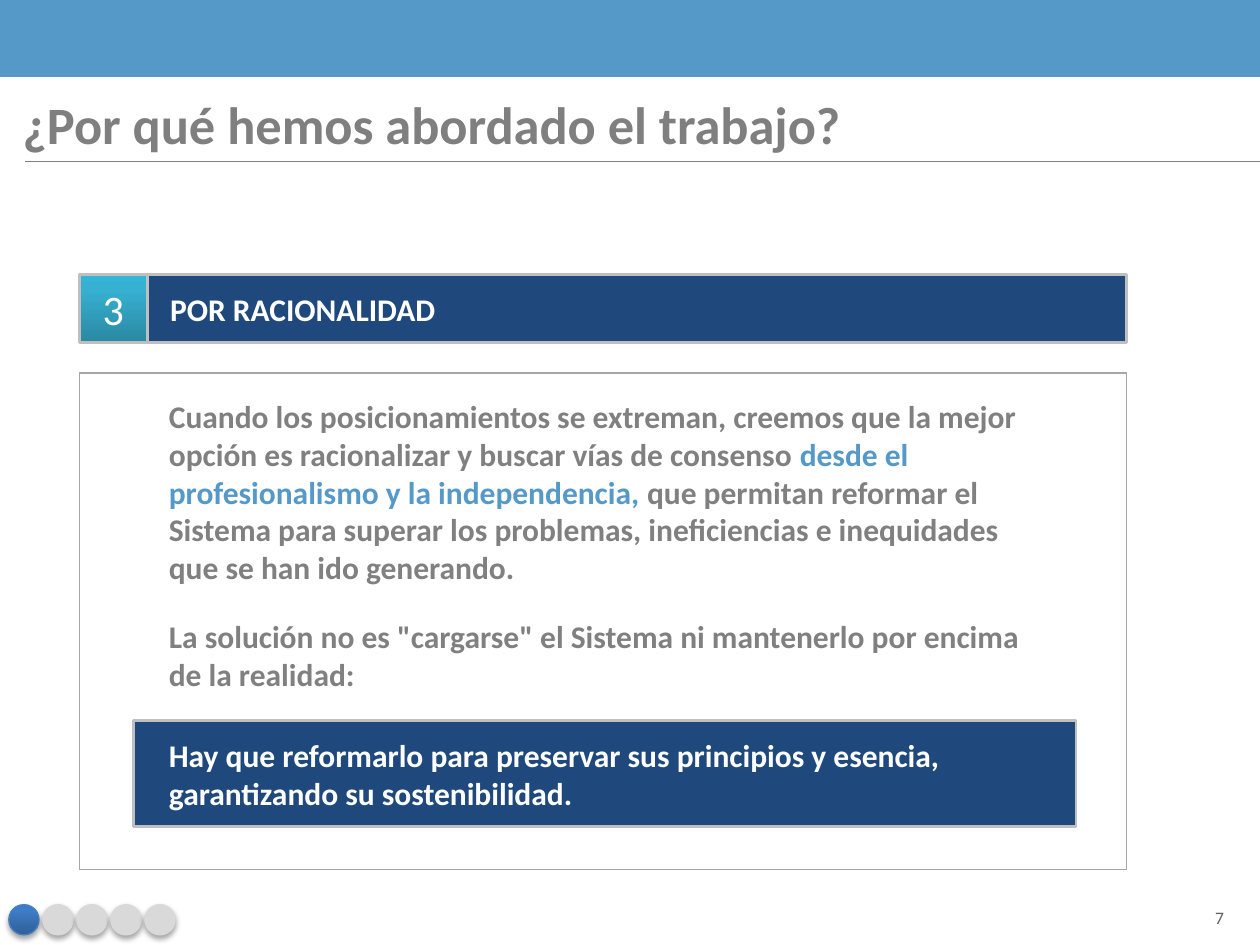
from copy import deepcopy
from dataclasses import dataclass

from lxml import etree
from pptx import Presentation
from pptx import util as u
from pptx.dml.color import RGBColor
from pptx.enum import shapes, text
from pptx.oxml.ns import qn


@dataclass(frozen=True)
class Theme:
    font: str = "Calibri"
    sky: str = "5599C9"
    navy: str = "1F497D"
    gray: str = "808080"
    title: str = "7F7F7F"
    number: str = "5F5F5F"
    edge: str = "BFBFBF"
    frame: str = "A6A6A6"
    dot: str = "D9D9D9"
    dot_edge: str = "4B7EBC"
    white: str = "FFFFFF"
    teal_fade: tuple = ("2A88A2", "37B1D2", "34B4D6")
    blue_fade: tuple = ("2F5F99", "3D7CC7", "3A7CCB")
    title_size: int = 30
    badge_size: int = 24
    body_size: int = 18
    page_size: int = 10


T = Theme()
W, H = 10, 7.5

# Each paragraph is a list of (text, colour) runs.
TITLE = [[("¿Por qué hemos abordado el trabajo?", T.title)]]
HEADING = [[("POR RACIONALIDAD", T.white)]]
BADGE = [[("3", T.white)]]
PAGE = [[("7", T.number)]]
REASONS = [
    [("Cuando los posicionamientos se extreman, creemos que la mejor opción es "
      "racionalizar y buscar vías de consenso ", T.gray),
     ("desde el profesionalismo y la independencia, ", T.sky),
     ("que permitan reformar el Sistema para superar los problemas, "
      "ineficiencias e inequidades que se han ido generando.", T.gray)],
    [('La solución no es "cargarse" el Sistema ni mantenerlo por encima '
      "de la realidad:", T.gray)],
]
CONCLUSION = [[("Hay que reformarlo para preservar sus principios y esencia, "
                "garantizando su sostenibilidad.", T.white)]]
DOTS, ACTIVE_DOT = 5, 0

# Layout, in inches
LEFT, RIGHT = 0.63, 8.94
BAND_H = 0.61
RULE_Y = 1.28
PAD = 0.12
BAR_X, BAR_Y, BAR_H = 1.06, 2.18, 0.54
TEXT_X, TEXT_W = 1.22, 7.09
FRAME_Y, FRAME_H = 2.96, 3.94
END_Y, END_W, END_H = 5.72, 7.48, 0.84
DOT_X, DOT_Y, DOT_D, DOT_STEP = 0.07, 7.18, 0.24, 0.27


def inches(*lengths):
    return [u.Inches(v) for v in lengths]


def rgb(code):
    return RGBColor.from_string(code)


def fade(fill, colors):
    """Vertical gradient, listed from bottom to top."""
    fill.gradient()
    fill.gradient_angle = 90
    stops = fill.gradient_stops
    first = stops[0]._gs
    first.addnext(deepcopy(first))
    for stop, place, color in zip(fill.gradient_stops, (0, 0.8, 1), colors):
        stop.position = place
        stop.color.rgb = rgb(color)


def add_box(parent, box, fill=None, line=None, width=0.75,
            kind=shapes.MSO_SHAPE.RECTANGLE):
    s = parent.add_shape(kind, *inches(*box))
    s.shadow.inherit = False
    if fill is None:
        s.fill.background()
    elif isinstance(fill, tuple):
        fade(s.fill, fill)
    else:
        s.fill.solid()
        s.fill.fore_color.rgb = rgb(fill)
    if line:
        s.line.color.rgb = rgb(line)
        s.line.width = u.Pt(width)
    else:
        s.line.fill.background()
    return s


def write(s, paragraphs, size=T.body_size, bold=True, inset=PAD,
          anchor=text.MSO_ANCHOR.TOP, align=text.PP_ALIGN.LEFT):
    tf = s.text_frame
    frame = dict(word_wrap=True, auto_size=text.MSO_AUTO_SIZE.NONE,
                 vertical_anchor=anchor, margin_left=u.Inches(inset),
                 margin_right=u.Inches(PAD), margin_top=u.Inches(PAD),
                 margin_bottom=u.Inches(PAD))
    for name, value in frame.items():
        setattr(tf, name, value)
    for i, runs in enumerate(paragraphs):
        p = tf.add_paragraph() if i else tf.paragraphs[0]
        p.alignment = align
        p.space_before = u.Pt(12 if i else 0)
        p.space_after = u.Pt(6 if len(paragraphs) > 1 else 0)
        for words, color in runs:
            r = p.add_run()
            r.text = words
            for name, value in dict(name=T.font, size=u.Pt(size), bold=bold).items():
                setattr(r.font, name, value)
            r.font.color.rgb = rgb(color)


def add_text(slide, box, paragraphs, **style):
    write(slide.shapes.add_textbox(*inches(*box)), paragraphs, **style)


def add_soft_shadow(s):
    effects = s._element.spPr.find(qn("a:effectLst"))
    shadow = etree.SubElement(effects, qn("a:outerShdw"), dir="5400000",
                              blurRad=str(u.Pt(3.1)), dist=str(u.Pt(1.8)),
                              rotWithShape="0")
    color = etree.SubElement(shadow, qn("a:srgbClr"), val="000000")
    etree.SubElement(color, qn("a:alpha"), val="35000")


def add_progress(slide):
    group = slide.shapes.add_group_shape().shapes
    for i in range(DOTS):
        active = i == ACTIVE_DOT
        dot = add_box(group, (DOT_X + i * DOT_STEP, DOT_Y, DOT_D, DOT_D),
                      T.blue_fade if active else T.dot,
                      T.dot_edge if active else T.dot,
                      kind=shapes.MSO_SHAPE.OVAL)
        add_soft_shadow(dot)


def add_rule(slide):
    rule = slide.shapes.add_connector(shapes.MSO_CONNECTOR.STRAIGHT,
                                      *inches(0.2, RULE_Y, W, RULE_Y))
    rule.line.color.rgb = rgb(T.title)
    rule.line.width = u.Pt(0.75)
    etree.SubElement(rule._element.spPr, qn("a:effectLst"))


def main():
    prs = Presentation()
    prs.slide_width, prs.slide_height = inches(W, H)
    slide = prs.slides.add_slide(prs.slide_layouts[5])
    sp = slide.shapes
    centred = dict(bold=False, anchor=text.MSO_ANCHOR.MIDDLE,
                   align=text.PP_ALIGN.CENTER)

    title = sp.title
    title.left, title.top, title.width, title.height = inches(0.06, BAND_H, 9.88, 0.74)
    write(title, TITLE, size=T.title_size)
    add_box(sp, (0, 0, W, BAND_H), T.sky)
    add_rule(slide)
    add_text(slide, (9.43, 7.12, 0.5, 0.33), PAGE, size=T.page_size, **centred)
    add_progress(slide)

    bar = add_box(sp, (BAR_X, BAR_Y, RIGHT - BAR_X, BAR_H), T.navy, T.edge, 1.5)
    write(bar, HEADING, inset=0.29)
    badge = add_box(sp, (LEFT, BAR_Y, BAR_H, BAR_H), T.teal_fade, T.edge, 1.5)
    write(badge, BADGE, size=T.badge_size, **centred)

    add_box(sp, (LEFT, FRAME_Y, RIGHT - LEFT, FRAME_H), line=T.frame)
    add_text(slide, (TEXT_X, 3.03, TEXT_W, 2.61), REASONS)
    add_box(sp, (BAR_X, END_Y, END_W, END_H), T.navy, T.edge, 1.5)
    add_text(slide, (TEXT_X, END_Y, TEXT_W, END_H), CONCLUSION)

    prs.save("out.pptx")


if __name__ == "__main__":
    main()
